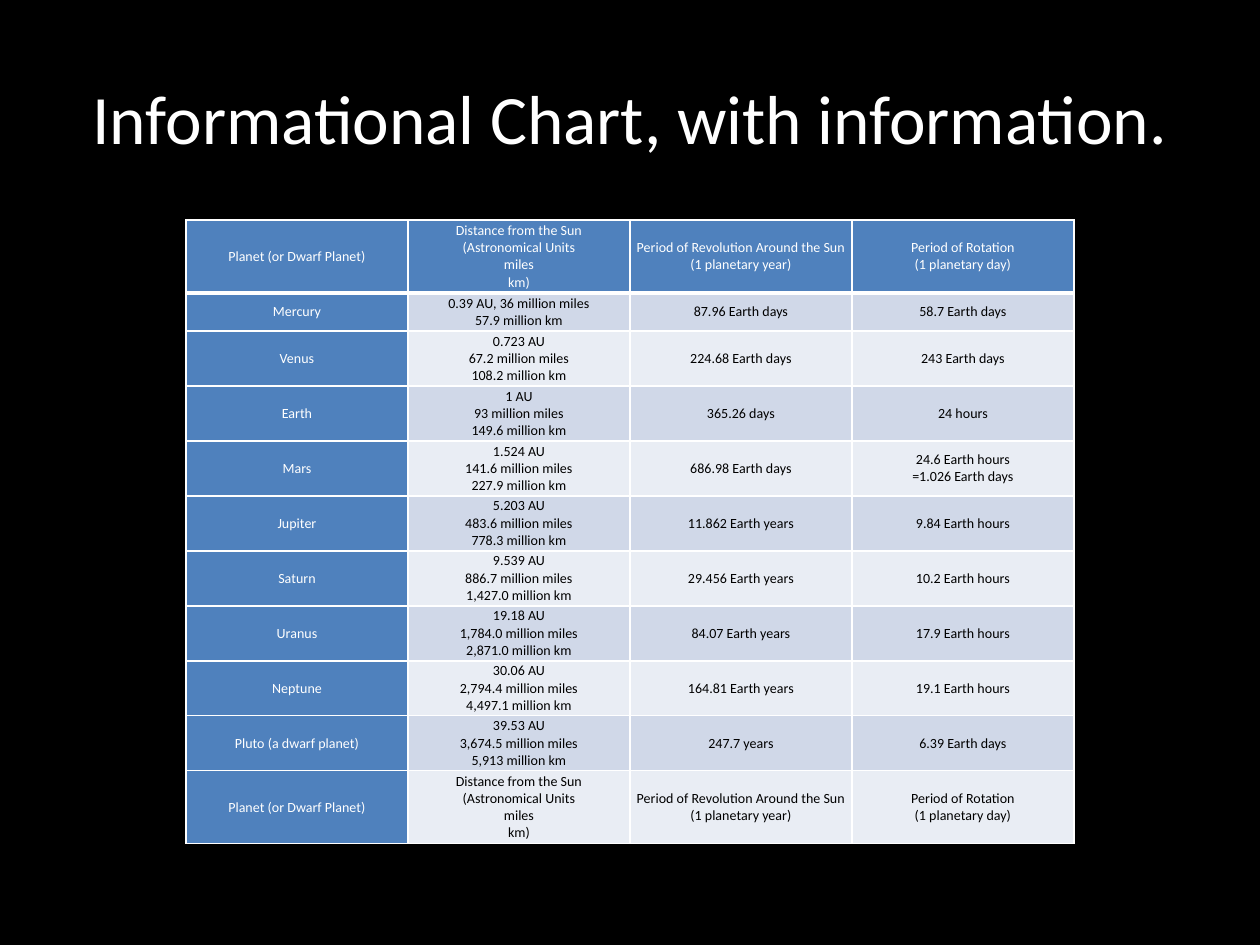
from lxml import etree
from pptx import Presentation
from pptx.dml.color import RGBColor
from pptx.enum.text import MSO_ANCHOR, PP_ALIGN
from pptx.oxml.ns import qn
from pptx.util import Emu, Pt

MIDDLE = MSO_ANCHOR.MIDDLE
CENTER = PP_ALIGN.CENTER
FONT = "Calibri"
BLACK, WHITE, BLUE = "000000", "FFFFFF", "4F81BD"
BANDS = ("D0D8E8", "E9EDF4")

HEADINGS = (
    "Planet (or Dwarf Planet)",
    "Distance from the Sun\n(Astronomical Units\nmiles\nkm)",
    "Period of Revolution Around the Sun\n(1 planetary year)",
    "Period of Rotation\n(1 planetary day)",
)
PLANETS = [
    ("Mercury", "0.39 AU, 36 million miles\n57.9 million km", "87.96 Earth days", "58.7 Earth days"),
    ("Venus", "0.723 AU\n67.2 million miles\n108.2 million km", "224.68 Earth days", "243 Earth days"),
    ("Earth", "1 AU\n93 million miles\n149.6 million km", "365.26 days", "24 hours"),
    ("Mars", "1.524 AU\n141.6 million miles\n227.9 million km", "686.98 Earth days",
     "24.6 Earth hours\n=1.026 Earth days"),
    ("Jupiter", "5.203 AU\n483.6 million miles\n778.3 million km", "11.862 Earth years", "9.84 Earth hours"),
    ("Saturn", "9.539 AU\n886.7 million miles\n1,427.0 million km", "29.456 Earth years", "10.2 Earth hours"),
    ("Uranus", "19.18 AU\n1,784.0 million miles\n2,871.0 million km", "84.07 Earth years", "17.9 Earth hours"),
    ("Neptune", "30.06 AU\n2,794.4 million miles\n4,497.1 million km", "164.81 Earth years", "19.1 Earth hours"),
    ("Pluto (a dwarf planet)", "39.53 AU\n3,674.5 million miles\n5,913 million km", "247.7 years",
     "6.39 Earth days"),
]
ROWS = [HEADINGS, *PLANETS, HEADINGS]
COLUMN_WIDTH = 222
ROW_HEIGHTS = {4: 73, 3: 55, 2: 38}  # by number of lines in the distance column


def px(n):
    return Emu(round(n * 914400 / 126))


def rgb(color):
    return RGBColor.from_string(color)


def write(tf, text, size, color):
    p = tf.paragraphs[0]
    p.text = text
    p.alignment = CENTER
    p.font.name = FONT
    p.font.size = Pt(size)
    p.font.color.rgb = rgb(color)


def add_title(s, text):
    tf = s.shapes.add_textbox(px(63), px(38), px(1134), px(157)).text_frame
    tf.word_wrap = True
    tf.vertical_anchor = MIDDLE
    write(tf, text, 39.6, WHITE)


def set_borders(cell, bottom):
    tc_pr = cell._tc.get_or_add_tcPr()
    for side, width in (("L", 1), ("R", 1), ("T", 1), ("B", bottom)):
        ln = etree.SubElement(tc_pr, qn(f"a:ln{side}"), w=str(Pt(width)))
        fill = etree.SubElement(ln, qn("a:solidFill"))
        etree.SubElement(fill, qn("a:srgbClr"), val=WHITE)


def fill_cell(cell, text, fill, color, bottom):
    set_borders(cell, bottom)
    cell.fill.solid()
    cell.fill.fore_color.rgb = rgb(fill)
    cell.vertical_anchor = MIDDLE
    cell.margin_left = cell.margin_right = px(1)
    cell.margin_top = cell.margin_bottom = px(1)
    write(cell.text_frame, text, 8, color)


def add_planet_table(s):
    heights = [ROW_HEIGHTS[len(row[1].split("\n"))] for row in ROWS]
    columns = len(HEADINGS)
    table = s.shapes.add_table(len(ROWS), columns, px(186), px(220),
                               px(columns * COLUMN_WIDTH), px(sum(heights))).table
    for column in table.columns:
        column.width = px(COLUMN_WIDTH)
    for i, row in enumerate(ROWS):
        table.rows[i].height = px(heights[i])
        for j, text in enumerate(row):
            # The top row and the first column are headings
            heading = i == 0 or j == 0
            fill_cell(table.cell(i, j), text,
                      BLUE if heading else BANDS[(i - 1) % 2],
                      WHITE if heading else BLACK,
                      3 if i == 0 else 1)


def main():
    prs = Presentation()
    prs.slide_width, prs.slide_height = px(1260), px(945)
    s = prs.slides.add_slide(prs.slide_layouts[6])

    # Background
    s.background.fill.solid()
    s.background.fill.fore_color.rgb = rgb(BLACK)

    # Title and table
    add_title(s, "Informational Chart, with information.")
    add_planet_table(s)
    prs.save("out.pptx")


if __name__ == "__main__":
    main()
